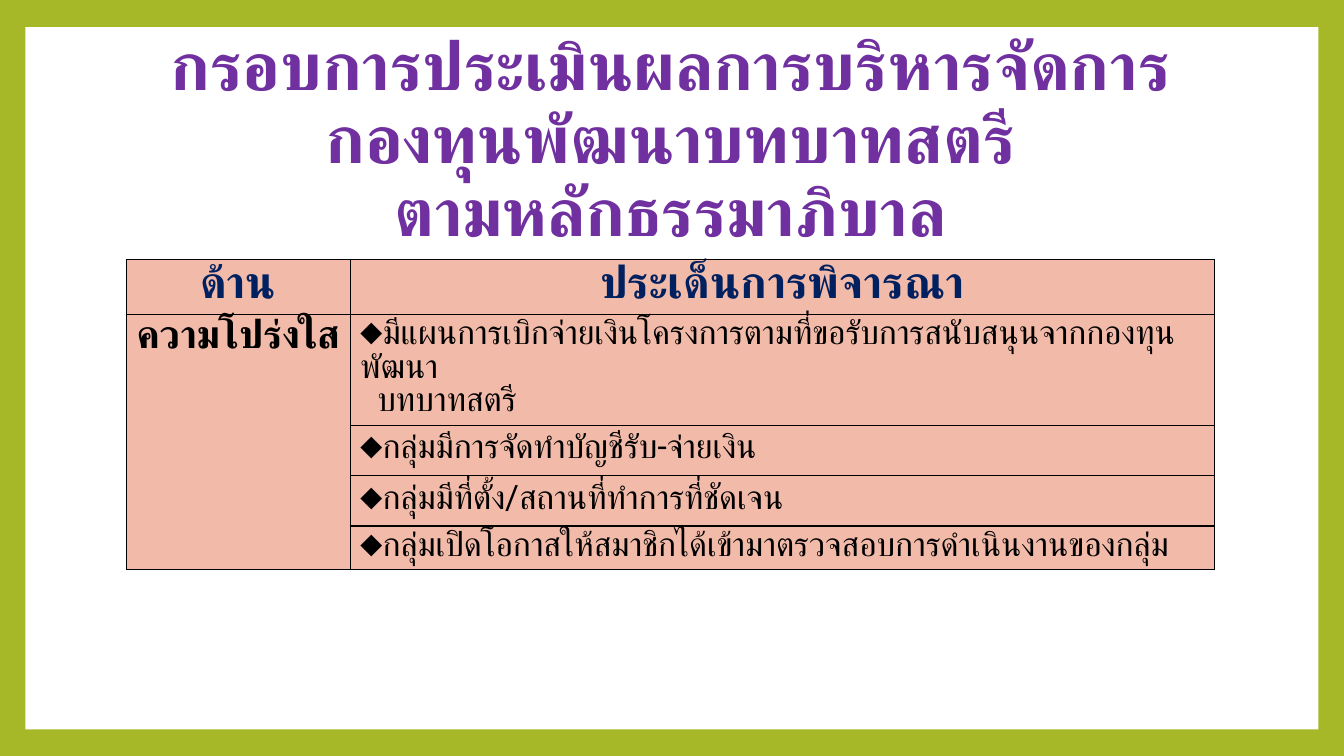
from dataclasses import dataclass

from lxml import etree
from pptx import Presentation
from pptx import util as u
from pptx.dml.color import RGBColor
from pptx.enum import shapes, text
from pptx.oxml import ns

WIDTH, HEIGHT = u.Inches(13.33), u.Inches(7.5)
CENTER, LEFT = text.PP_ALIGN.CENTER, text.PP_ALIGN.LEFT

TITLE = "กรอบการประเมินผลการบริหารจัดการกองทุนพัฒนาบทบาทสตรี\vตามหลักธรรมาภิบาล"
HEADINGS = ("ด้าน", "ประเด็นการพิจารณา")
ASPECT = "ความโปร่งใส"
CRITERIA = (
    ("⬥มีแผนการเบิกจ่ายเงินโครงการตามที่ขอรับการสนับสนุนจากกองทุนพัฒนา", "บทบาทสตรี"),
    ("⬥กลุ่มมีการจัดทำบัญชีรับ-จ่ายเงิน",),
    ("⬥กลุ่มมีที่ตั้ง/สถานที่ทำการที่ชัดเจน",),
    ("⬥กลุ่มเปิดโอกาสให้สมาชิกได้เข้ามาตรวจสอบการดำเนินงานของกลุ่ม",),
)
COLUMN_WIDTHS = (2.22, 8.57)
ROW_HEIGHTS = (0.54, 1.1, 0.5, 0.5, 0.43)
CONTINUATION_INDENT = 0.17


@dataclass(frozen=True)
class Theme:
    frame: str = "A6B727"
    panel: str = "FFFFFF"
    cell: str = "F2BAA9"
    border: str = "000000"
    title: tuple = ("Calibri", 48, True, "7030A0")
    heading: tuple = ("Roboto", 32, True, "002060")
    aspect: tuple = ("Roboto", 28, True, "000000")
    criterion: tuple = ("Roboto", 24, False, "000000")


THEME = Theme()


def share(left, top, width, height):
    """Turn shares of the slide's size into a box."""
    return [round(part * side) for part, side in
            zip((left, top, width, height), (WIDTH, HEIGHT, WIDTH, HEIGHT))]


def paint(fill, color):
    fill.solid()
    fill.fore_color.rgb = RGBColor.from_string(color)


def format_paragraph(paragraph, style, alignment, line_spacing):
    name, size, bold, color = style
    paragraph.alignment = alignment
    paragraph.line_spacing = line_spacing
    for run in paragraph.runs:
        values = {"name": name, "size": u.Pt(size), "bold": bold}
        for attribute, value in values.items():
            setattr(run.font, attribute, value)
        run.font.color.rgb = RGBColor.from_string(color)
        # Thai letters take the complex-script font
        etree.SubElement(run.font._element, ns.qn("a:cs"), typeface=name)


def add_frame(slide):
    paint(slide.background.fill, THEME.frame)
    panel = slide.shapes.add_shape(
        shapes.MSO_SHAPE.RECTANGLE, *share(0.019, 0.036, 0.962, 0.929))
    panel.shadow.inherit = False
    panel.line.fill.background()
    paint(panel.fill, THEME.panel)


def place_title(slide):
    title = slide.shapes.title
    # The panel is drawn first, so the title moves in front of it
    slide.shapes._spTree.append(title._element)
    box = share(0.094, 0.089, 0.81, 0.197)
    for attribute, value in zip(("left", "top", "width", "height"), box):
        setattr(title, attribute, value)
    frame = title.text_frame
    frame.text = TITLE
    values = {"word_wrap": True, "auto_size": text.MSO_AUTO_SIZE.NONE,
              "vertical_anchor": text.MSO_ANCHOR.MIDDLE}
    for attribute, value in values.items():
        setattr(frame, attribute, value)
    format_paragraph(frame.paragraphs[0], THEME.title, CENTER, 0.9)


def outline_cell(cell):
    properties = cell._tc.get_or_add_tcPr()
    for position, side in enumerate(("lnL", "lnR", "lnT", "lnB")):
        line = etree.Element(ns.qn(f"a:{side}"), w=str(u.Pt(1)))
        fill = etree.SubElement(line, ns.qn("a:solidFill"))
        etree.SubElement(fill, ns.qn("a:srgbClr"), val=THEME.border)
        properties.insert(position, line)


def fill_cell(cell, lines, style, alignment):
    """Write one paragraph a line, with later lines indented."""
    frame = cell.text_frame
    frame.text = "\n".join(lines)
    for number, paragraph in enumerate(frame.paragraphs):
        format_paragraph(paragraph, style, alignment, u.Pt(style[1]))
        if number:
            paragraph._p.get_or_add_pPr().set(
                "marL", str(u.Inches(CONTINUATION_INDENT)))


def add_criteria_table(slide):
    table = slide.shapes.add_table(
        len(ROW_HEIGHTS), len(COLUMN_WIDTHS),
        *share(0.094, 0.343, 0.81, 0.409)).table
    for column, width in zip(table.columns, COLUMN_WIDTHS):
        column.width = u.Inches(width)
    for row, height in zip(table.rows, ROW_HEIGHTS):
        row.height = u.Inches(height)
    for cell in table.iter_cells():
        paint(cell.fill, THEME.cell)
        outline_cell(cell)

    for column, heading in enumerate(HEADINGS):
        fill_cell(table.cell(0, column), [heading], THEME.heading, CENTER)
    table.cell(1, 0).merge(table.cell(len(CRITERIA), 0))
    fill_cell(table.cell(1, 0), [ASPECT], THEME.aspect, CENTER)
    for row, lines in enumerate(CRITERIA, start=1):
        cell = table.cell(row, 1)
        fill_cell(cell, lines, THEME.criterion, LEFT)
        cell.vertical_anchor = (
            text.MSO_ANCHOR.TOP if row == 1 else text.MSO_ANCHOR.MIDDLE)


def main():
    presentation = Presentation()
    presentation.slide_width, presentation.slide_height = WIDTH, HEIGHT
    title_only = presentation.slide_layouts[5]
    slide = presentation.slides.add_slide(title_only)
    add_frame(slide)
    place_title(slide)
    add_criteria_table(slide)
    presentation.save("out.pptx")


if __name__ == "__main__":
    main()
